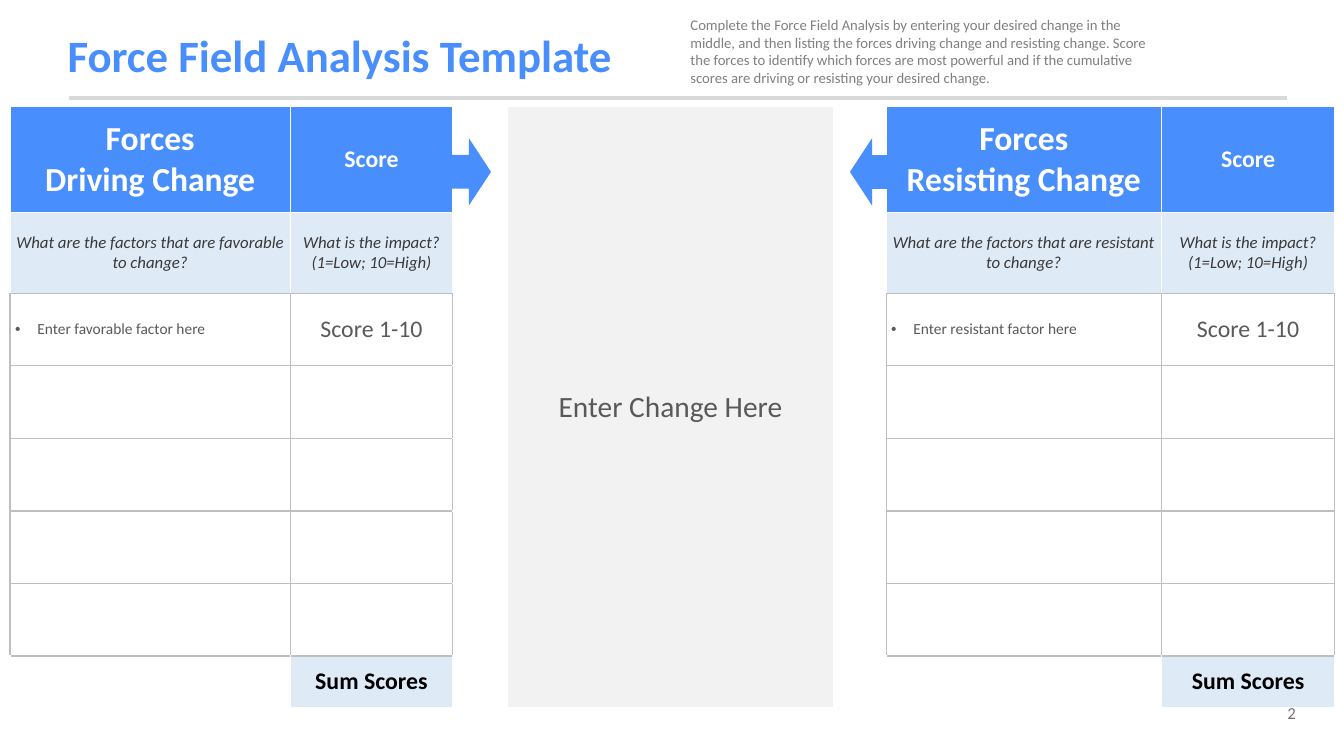
import lxml.etree
import pptx
import pptx.dml.color
import pptx.enum.shapes
import pptx.enum.text
import pptx.oxml.ns
import pptx.util

EMU_PER_PX = 9144
FONT = "Calibri"
BLUE = "488EFD"
PALE_BLUE = "DEEBF7"
WHITE = "FFFFFF"
GRID_GREY = "BFBFBF"
PANEL_GREY = "F2F2F2"
TEXT_GREY = "595959"

LEFT = pptx.enum.text.PP_ALIGN.LEFT
CENTER = pptx.enum.text.PP_ALIGN.CENTER
RIGHT = pptx.enum.text.PP_ALIGN.RIGHT
MIDDLE = pptx.enum.text.MSO_ANCHOR.MIDDLE

COLUMN_WIDTHS = [278, 161, 54, 324, 52, 273, 172]
ROW_HEIGHTS = [105, 80, 72, 72, 72, 72, 72, 51]
CHANGE_COLUMN = 3
FACTOR_COLUMNS = (0, 5)
SCORE_COLUMNS = (1, 6)
FACTOR_ROWS = range(2, 7)
SUM_ROW = 7
EDGES = {"lnL": (0, -1), "lnR": (0, 1), "lnT": (-1, 0), "lnB": (1, 0)}

INSTRUCTIONS = (
    "Complete the Force Field Analysis by entering your desired change in the middle, "
    "and then listing the forces driving change and resisting change. Score the forces "
    "to identify which forces are most powerful and if the cumulative scores are driving "
    "or resisting your desired change."
)


def px(length):
    return pptx.util.Emu(length * EMU_PER_PX)


def rgb(color):
    return pptx.dml.color.RGBColor.from_string(color)


def add_xml(parent, tag, **attributes):
    return lxml.etree.SubElement(parent, pptx.oxml.ns.qn(tag), attributes)


def write_text(text_frame, text, size, color, bold=False, italic=False,
               align=LEFT, line_spacing=None, bullet_indent=0):
    text_frame.word_wrap = True
    text_frame.text = text
    for paragraph in text_frame.paragraphs:
        paragraph.alignment = align
        if line_spacing:
            paragraph.line_spacing = line_spacing
        if bullet_indent:
            properties = paragraph._p.get_or_add_pPr()
            properties.set("marL", str(px(bullet_indent)))
            properties.set("indent", str(-px(bullet_indent)))
            add_xml(properties, "a:buFont", typeface="Arial")
            add_xml(properties, "a:buChar", char="•")
        for run in paragraph.runs:
            run.font.name = FONT
            run.font.size = pptx.util.Pt(size)
            run.font.bold = bold
            run.font.italic = italic
            run.font.color.rgb = rgb(color)


def add_text_box(slide, left, top, width, height, text, **text_format):
    box = slide.shapes.add_textbox(px(left), px(top), px(width), px(height))
    write_text(box.text_frame, text, **text_format)


def add_title(slide, text):
    title = slide.shapes.title
    title.left, title.top, title.width, title.height = px(57), px(19), px(1094), px(77)
    title.text_frame.vertical_anchor = MIDDLE
    write_text(title.text_frame, text, size=32, color=BLUE, bold=True, line_spacing=0.9)


def add_rule(slide, left, right, top):
    rule = slide.shapes.add_connector(
        pptx.enum.shapes.MSO_CONNECTOR.STRAIGHT, px(left), px(top), px(right), px(top))
    rule.line.color.rgb = rgb("D9D9D9")
    rule.line.width = pptx.util.Pt(3)
    add_xml(rule._element.spPr, "a:effectLst")


def add_arrow(slide, left, rotation):
    arrow = slide.shapes.add_shape(
        pptx.enum.shapes.MSO_SHAPE.RIGHT_ARROW, px(left), px(137), px(44), px(67))
    arrow.rotation = rotation
    arrow.shadow.inherit = False
    arrow.fill.solid()
    arrow.fill.fore_color.rgb = rgb(BLUE)
    arrow.line.fill.background()


def is_factor_cell(row, column):
    return row in FACTOR_ROWS and column in FACTOR_COLUMNS + SCORE_COLUMNS


def cell_fill(row, column):
    if column == CHANGE_COLUMN:
        return PANEL_GREY
    if column not in FACTOR_COLUMNS + SCORE_COLUMNS:
        return None
    if row == SUM_ROW:
        return PALE_BLUE if column in SCORE_COLUMNS else None
    return {0: BLUE, 1: PALE_BLUE}.get(row, WHITE)


def format_cell(cell, row, column):
    properties = cell._tc.get_or_add_tcPr()
    for edge, (row_step, column_step) in EDGES.items():
        on_grid = is_factor_cell(row, column) or is_factor_cell(row + row_step, column + column_step)
        line = add_xml(properties, "a:" + edge, w=str(pptx.util.Pt(1)))
        add_xml(add_xml(line, "a:solidFill"), "a:srgbClr", val=GRID_GREY if on_grid else WHITE)
    color = cell_fill(row, column)
    if color:
        cell.fill.solid()
        cell.fill.fore_color.rgb = rgb(color)
    else:
        cell.fill.background()
    cell.vertical_anchor = MIDDLE
    cell.margin_left = cell.margin_right = cell.margin_top = cell.margin_bottom = px(5)


def write_forces(table, column, direction, quality):
    def write(row, offset, text, **text_format):
        write_text(table.cell(row, column + offset).text_frame, text, **text_format)

    question = dict(size=12, color="3A3838", italic=True, align=CENTER)
    write(0, 0, f"Forces\n{direction} Change", size=24, color=WHITE, bold=True, align=CENTER)
    write(0, 1, "Score", size=17, color=WHITE, bold=True, align=CENTER)
    write(1, 0, f"What are the factors that are {quality} to change?", **question)
    write(1, 1, "What is the impact? (1=Low; 10=High)", **question)
    write(2, 0, f"Enter {quality} factor here", size=11, color=TEXT_GREY, bullet_indent=22)
    write(2, 1, "Score 1-10", size=17, color=TEXT_GREY, align=CENTER)
    write(SUM_ROW, 1, "Sum Scores", size=17, color="000000", bold=True, align=CENTER)


def add_force_table(slide):
    table = slide.shapes.add_table(
        len(ROW_HEIGHTS), len(COLUMN_WIDTHS), px(10), px(106),
        px(sum(COLUMN_WIDTHS)), px(sum(ROW_HEIGHTS))).table
    table.first_row = False
    table.horz_banding = False
    for column, width in enumerate(COLUMN_WIDTHS):
        table.columns[column].width = px(width)
    for row, height in enumerate(ROW_HEIGHTS):
        table.rows[row].height = px(height)
        for column in range(len(COLUMN_WIDTHS)):
            format_cell(table.cell(row, column), row, column)
    change_cell = table.cell(0, CHANGE_COLUMN)
    change_cell.merge(table.cell(SUM_ROW, CHANGE_COLUMN))
    write_text(change_cell.text_frame, "Enter Change Here", size=21, color=TEXT_GREY, align=CENTER)
    write_forces(table, FACTOR_COLUMNS[0], "Driving", "favorable")
    write_forces(table, FACTOR_COLUMNS[1], "Resisting", "resistant")


def main():
    presentation = pptx.Presentation()
    presentation.slide_width = px(1333)
    presentation.slide_height = px(750)
    slide = presentation.slides.add_slide(presentation.slide_layouts[5])
    add_text_box(slide, 1193, 692, 102, 30, "2", size=12, color="767171", align=RIGHT)
    add_rule(slide, 68, 1276, 97)
    add_title(slide, "Force Field Analysis Template")
    add_force_table(slide)
    add_arrow(slide, 443, 0)
    add_arrow(slide, 843, 180)
    add_text_box(slide, 675, 11, 475, 81, INSTRUCTIONS, size=10.5, color="808080")
    presentation.save("out.pptx")


if __name__ == "__main__":
    main()
